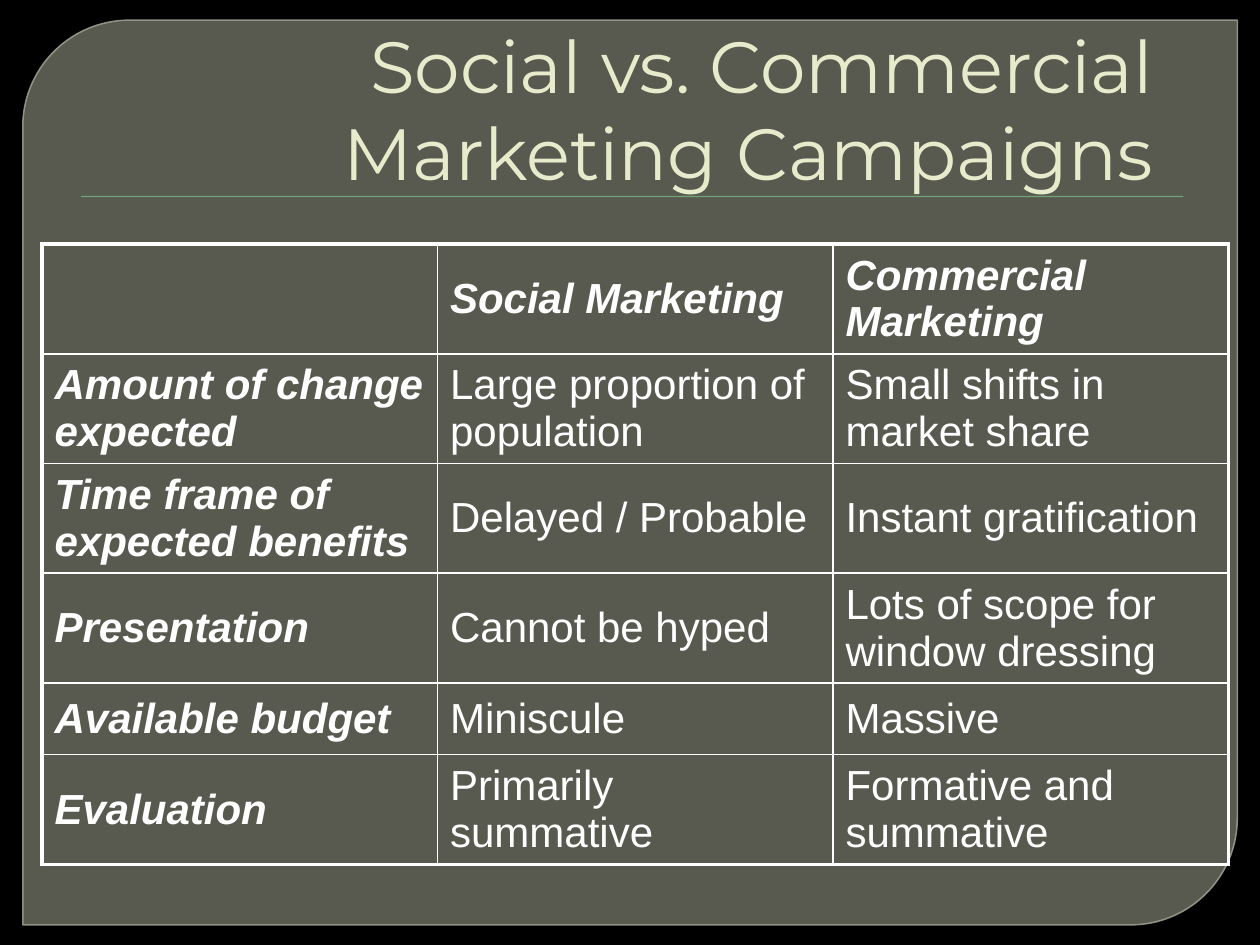
from lxml import etree
from pptx import Presentation
from pptx import util as u
from pptx.dml.color import RGBColor
from pptx.enum import shapes, text
from pptx.oxml import ns

BLACK = RGBColor(0x00, 0x00, 0x00)
WHITE = RGBColor(0xFF, 0xFF, 0xFF)
PANEL = RGBColor(0x88, 0x8B, 0x7B)
PANEL_EDGE = RGBColor(0x9D, 0xA0, 0x90)
GREEN = RGBColor(0x72, 0xA3, 0x76)
CREAM = RGBColor(0xE7, 0xEA, 0xCB)

ROWS = [
    ("", "Social Marketing", "Commercial Marketing"),
    ("Amount of change expected", "Large proportion of population", "Small shifts in market share"),
    ("Time frame of expected benefits", "Delayed / Probable", "Instant gratification"),
    ("Presentation", "Cannot be hyped", "Lots of scope for window dressing"),
    ("Available budget", "Miniscule", "Massive"),
    ("Evaluation", "Primarily summative", "Formative and summative"),
]
ROW_HEIGHTS = [62.7, 62.7, 62.7, 62.7, 41, 62.7]
COLUMN_WIDTH = 226
OUTER, INNER = 2.25, 1


def write_text(frame, content, *, size, font, color, bold=False, italic=False,
               align=text.PP_ALIGN.LEFT):
    """Fill the first paragraph of a text frame with formatted text."""
    para = frame.paragraphs[0]
    para.alignment = align
    para.font.size = u.Pt(size)
    if content:
        span = para.add_run()
        span.text = content
        span.font.name = font
        span.font.size = u.Pt(size)
        span.font.bold = bold
        span.font.italic = italic
        span.font.color.rgb = color


def set_alpha(fill_format, percent):
    """Make a solid fill partly transparent."""
    color = fill_format._xPr.find(".//" + ns.qn("a:srgbClr"))
    etree.SubElement(color, ns.qn("a:alpha")).set("val", str(percent * 1000))


def add_panel(page):
    """Draw the translucent panel with two rounded corners."""
    panel = page.shapes.add_shape(shapes.MSO_SHAPE.ROUND_2_DIAG_RECTANGLE,
                                  u.Pt(13), u.Pt(11.5), u.Pt(694), u.Pt(517))
    panel.shadow.inherit = False
    panel.adjustments[0] = 0.118
    panel.fill.solid()
    panel.fill.fore_color.rgb = PANEL
    set_alpha(panel.fill, 65)
    panel.line.color.rgb = PANEL_EDGE
    panel.line.width = u.Pt(0.87)
    set_alpha(panel.line.fill, 88)


def add_rule(page):
    """Draw the thin bar under the title."""
    rule = page.shapes.add_shape(shapes.MSO_SHAPE.RECTANGLE,
                                 u.Pt(46.3), u.Pt(112), u.Pt(630), u.Pt(0.7))
    rule.shadow.inherit = False
    rule.fill.solid()
    rule.fill.fore_color.rgb = GREEN
    rule.line.fill.background()


def add_title(page, content):
    """Add the right-aligned title, resting on its lower edge."""
    box = page.shapes.add_textbox(u.Pt(54), u.Pt(1.5), u.Pt(612), u.Pt(113.5))
    frame = box.text_frame
    frame.word_wrap = True
    frame.vertical_anchor = text.MSO_ANCHOR.BOTTOM
    write_text(frame, content, size=41.4, font="Montserrat", color=CREAM,
               align=text.PP_ALIGN.RIGHT)


def set_borders(cell, widths):
    """Draw white cell borders from widths keyed by side letter."""
    properties = cell._tc.get_or_add_tcPr()
    for side, width in widths.items():
        line = etree.SubElement(properties, ns.qn("a:ln" + side), w=str(u.Pt(width)))
        fill = etree.SubElement(line, ns.qn("a:solidFill"))
        etree.SubElement(fill, ns.qn("a:srgbClr"), val=str(WHITE))


def add_comparison(page):
    """Add the comparison table with a heavy frame and a light grid."""
    last_row, last_column = len(ROWS) - 1, len(ROWS[0]) - 1
    table = page.shapes.add_table(len(ROWS), len(ROWS[0]), u.Pt(24), u.Pt(139.5),
                                  u.Pt(COLUMN_WIDTH * len(ROWS[0])),
                                  u.Pt(sum(ROW_HEIGHTS))).table
    table.first_row = False
    table.horz_banding = False
    for column in table.columns:
        column.width = u.Pt(COLUMN_WIDTH)
    for r, (height, entries) in enumerate(zip(ROW_HEIGHTS, ROWS)):
        table.rows[r].height = u.Pt(height)
        for c, entry in enumerate(entries):
            cell = table.cell(r, c)
            set_borders(cell, {
                "L": OUTER if c == 0 else INNER,
                "R": OUTER if c == last_column else INNER,
                "T": OUTER if r == 0 else INNER,
                "B": OUTER if r == last_row else INNER,
            })
            cell.fill.background()
            cell.vertical_anchor = text.MSO_ANCHOR.MIDDLE
            heading = r == 0 or c == 0
            write_text(cell.text_frame, entry, size=24, font="Arial", color=WHITE,
                       bold=heading, italic=heading)


def main():
    """Build the slide and save it."""
    deck = Presentation()
    deck.slide_width, deck.slide_height = u.Pt(720), u.Pt(540)
    page = deck.slides.add_slide(deck.slide_layouts[6])
    page.background.fill.solid()
    page.background.fill.fore_color.rgb = BLACK
    add_panel(page)
    add_rule(page)
    add_comparison(page)
    add_title(page, "Social vs. Commercial Marketing Campaigns")
    deck.save("out.pptx")


if __name__ == "__main__":
    main()
